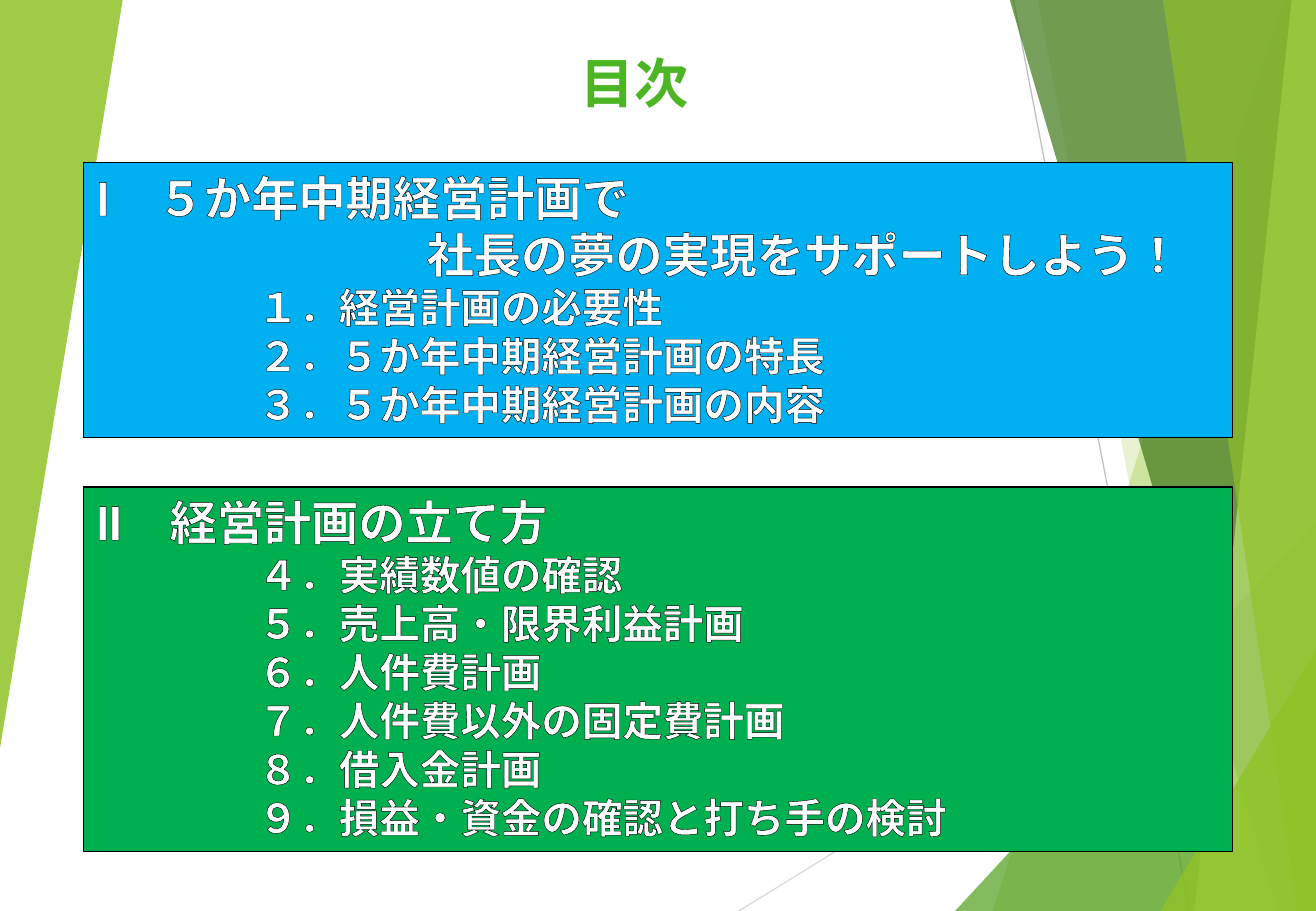
from dataclasses import dataclass

from lxml import etree
from pptx import Presentation
from pptx.dml.color import RGBColor
from pptx.enum.lang import MSO_LANGUAGE_ID
from pptx.enum.shapes import MSO_CONNECTOR, MSO_SHAPE
from pptx.enum.text import MSO_ANCHOR, MSO_AUTO_SIZE, PP_ALIGN
from pptx.oxml.ns import qn
from pptx.util import Inches, Pt

STRAIGHT = MSO_CONNECTOR.STRAIGHT
RECTANGLE = MSO_SHAPE.RECTANGLE
TOP = MSO_ANCHOR.TOP
NO_FIT = MSO_AUTO_SIZE.NONE
LEFT, CENTER = PP_ALIGN.LEFT, PP_ALIGN.CENTER
JAPANESE = MSO_LANGUAGE_ID.JAPANESE

WIDTH, HEIGHT = 10.83, 7.5


@dataclass(frozen=True)
class Theme:
    font: str = "Roboto"
    title_size: int = 32
    heading_size: int = 28
    item_size: int = 24
    line_width: float = 0.75
    text: str = "FFFFFF"
    outline: str = "000000"
    blue: str = "00B0F0"
    green: str = "00B050"
    leaf: str = "90C226"
    grass: str = "54A021"
    forest: str = "3F7819"
    lime: str = "C0E474"
    pale_grey: str = "D9D9D9"
    grey: str = "BFBFBF"
    title_stops: tuple = ((0, "92E27A"), (75, "4CB523"), (100, "398F00"))


def set_values(target, values):
    for name, value in values.items():
        setattr(target, name, value)


def add_color(parent, color):
    return etree.SubElement(parent, qn("a:srgbClr"), val=color)


class SlideBuilder:
    def __init__(self, slide, theme):
        self.slide = slide
        self.theme = theme

    def line(self, start, end, color):
        points = [Inches(value) for value in (*start, *end)]
        connector = self.slide.shapes.add_connector(STRAIGHT, *points)
        connector.line.color.rgb = RGBColor.from_string(color)
        connector.line.width = Pt(self.theme.line_width)
        properties = connector._element.find(qn("p:spPr"))
        etree.SubElement(properties, qn("a:effectLst"))

    def facet(self, points, color, opacity):
        corners = [(Inches(x), Inches(y)) for x, y in points]
        builder = self.slide.shapes.build_freeform(*corners[0])
        builder.add_line_segments(corners[1:], close=True)
        shape = builder.convert_to_shape()
        shape.shadow.inherit = False
        shape.line.fill.background()
        shape.fill.solid()
        shape.fill.fore_color.rgb = RGBColor.from_string(color)
        fill_color = shape._element.spPr.find(".//" + qn("a:srgbClr"))
        etree.SubElement(fill_color, qn("a:alpha"), val=str(opacity * 1000))

    def span(self, para, text, size):
        span = para.add_run()
        span.text = text
        set_values(span.font, {"name": self.theme.font, "size": Pt(size),
                               "bold": True, "language_id": JAPANESE})
        properties = span.font._element
        etree.SubElement(properties, qn("a:ea"), typeface=self.theme.font)
        return span

    def title(self, text, left, top, width, height):
        title = self.slide.shapes.title
        set_values(title, {"left": Inches(left), "top": Inches(top),
                           "width": Inches(width), "height": Inches(height)})
        set_values(title.text_frame, {"word_wrap": True, "auto_size": NO_FIT,
                                      "vertical_anchor": TOP})
        para = title.text_frame.paragraphs[0]
        para.alignment = CENTER
        properties = self.span(para, text, self.theme.title_size).font._element
        # Vertical gradient on the letters
        gradient = etree.Element(qn("a:gradFill"))
        stops = etree.SubElement(gradient, qn("a:gsLst"))
        for position, color in self.theme.title_stops:
            stop = etree.SubElement(stops, qn("a:gs"), pos=str(position * 1000))
            add_color(stop, color)
        etree.SubElement(gradient, qn("a:lin"), ang="5400000", scaled="0")
        properties.insert(0, gradient)

    def outline_text(self, span):
        line = etree.Element(qn("a:ln"), w=str(Pt(self.theme.line_width)))
        add_color(etree.SubElement(line, qn("a:solidFill")), self.theme.outline)
        span.font._element.insert(0, line)

    def section(self, top, height, color, lines):
        box = self.slide.shapes.add_shape(
            RECTANGLE, Inches(0.69), Inches(top), Inches(9.45), Inches(height))
        box.shadow.inherit = False
        box.fill.solid()
        box.fill.fore_color.rgb = RGBColor.from_string(color)
        box.line.color.rgb = RGBColor.from_string(self.theme.outline)
        box.line.width = Pt(self.theme.line_width)
        frame = box.text_frame
        set_values(frame, {"word_wrap": True, "auto_size": NO_FIT,
                           "vertical_anchor": TOP})
        for index, (text, size, indent) in enumerate(lines):
            para = frame.add_paragraph() if index else frame.paragraphs[0]
            para.alignment = LEFT
            # The indent is counted in full-width characters
            para._p.get_or_add_pPr().set("marL", str(Pt(size * indent)))
            span = self.span(para, text, size)
            span.font.color.rgb = RGBColor.from_string(self.theme.text)
            self.outline_text(span)


def main():
    theme = Theme()
    deck = Presentation()
    deck.slide_width, deck.slide_height = Inches(WIDTH), Inches(HEIGHT)
    page = SlideBuilder(deck.slides.add_slide(deck.slide_layouts[5]), theme)

    # Background lines and facets
    page.line((6.08, HEIGHT), (WIDTH, 4.57), theme.pale_grey)
    page.line((8.34, 0), (9.79, HEIGHT), theme.grey)
    right_top, right_bottom = (WIDTH, 0), (WIDTH, HEIGHT)
    bands = [
        (10.56, 8.17, theme.leaf, 30),
        (8.54, 9.96, theme.leaf, 20),
        (None, 7.86, theme.grass, 72),
        (8.31, 10.51, theme.forest, 70),
        (10.63, 9.83, theme.lime, 70),
        (9.57, 10.68, theme.leaf, 65),
        (None, 9.55, theme.leaf, 80),
    ]
    corner_tops = {7.86: 4.29, 9.55: 5.35}
    for top_x, bottom_x, color, opacity in bands:
        if top_x is None:
            edge = [(WIDTH, corner_tops[bottom_x])]
        else:
            edge = [right_top, (top_x, 0)]
        page.facet([*edge, (bottom_x, HEIGHT), right_bottom], color, opacity)
    page.facet([(0, 0), (1.01, 0), (0, 6.16)], theme.leaf, 85)

    # Title
    page.title("目次", 4, 0.36, 2.44, 0.64)

    # Sections of the contents
    heading, item = theme.heading_size, theme.item_size
    page.section(1.34, 2.26, theme.blue, [
        ("Ⅰ　５か年中期経営計画で", heading, 0),
        ("社長の夢の実現をサポートしよう！", heading, 7),
        ("１．経営計画の必要性", item, 4),
        ("２．５か年中期経営計画の特長", item, 4),
        ("３．５か年中期経営計画の内容", item, 4),
    ])
    page.section(4.01, 3, theme.green, [
        ("Ⅱ　経営計画の立て方", heading, 0),
        ("４．実績数値の確認", item, 4),
        ("５．売上高・限界利益計画", item, 4),
        ("６．人件費計画", item, 4),
        ("７．人件費以外の固定費計画", item, 4),
        ("８．借入金計画", item, 4),
        ("９．損益・資金の確認と打ち手の検討", item, 4),
    ])

    deck.save("out.pptx")


if __name__ == "__main__":
    main()
